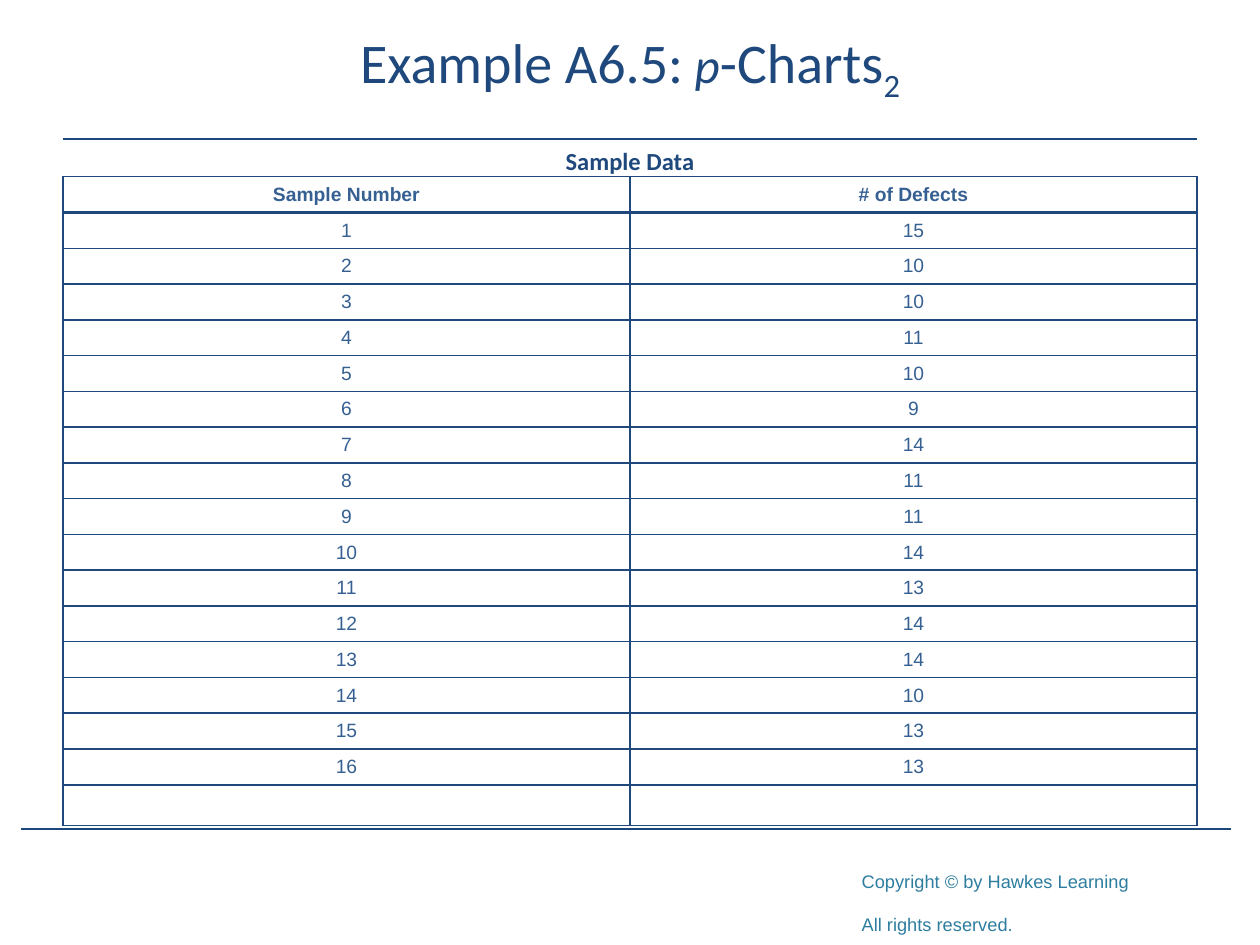
from lxml.etree import SubElement
from pptx import Presentation
from pptx.dml.color import RGBColor
from pptx.enum.shapes import MSO_CONNECTOR, MSO_SHAPE
from pptx.enum.text import MSO_ANCHOR, PP_ALIGN
from pptx.oxml import parse_xml
from pptx.oxml.ns import nsdecls, qn
from pptx.util import Pt

NAVY = RGBColor(0x1F, 0x49, 0x7D)
RULE = RGBColor(0x1C, 0x47, 0x7C)
BLUE = RGBColor(0x36, 0x60, 0x92)
TEAL = RGBColor(0x2D, 0x7D, 0x9F)
WHITE = RGBColor(0xFF, 0xFF, 0xFF)

DEFECTS = [15, 10, 10, 11, 10, 9, 14, 11, 11, 14, 13, 14, 14, 10, 13, 13]
ROW_HEIGHT, LAST_ROW_HEIGHT = 20.45, 23.4


def add_run(p, text, size, color, font="Calibri", bold=False, italic=False,
            subscript=False, align=PP_ALIGN.CENTER):
    p.alignment = align
    r = p.add_run()
    r.text = text
    r.font.name, r.font.size = font, Pt(size)
    r.font.bold, r.font.italic = bold, italic
    r.font.color.rgb = color
    if subscript:
        r.font._element.set("baseline", "-25000")


def set_border(cell, side, width):
    """Draw one side (L, R, T or B) of a cell; call before setting its fill."""
    cell._tc.get_or_add_tcPr().append(parse_xml(
        f'<a:ln{side} {nsdecls("a")} w="{Pt(width)}"><a:solidFill>'
        f'<a:srgbClr val="{NAVY}"/></a:solidFill></a:ln{side}>'))


prs = Presentation()
prs.slide_width, prs.slide_height = Pt(720), Pt(540)
s = prs.slides.add_slide(prs.slide_layouts[6])

# Footer
for left, top, width, height in [(71.3, 473, 221.8, 21.6), (485.3, 460.8, 221.8, 77.8)]:
    sp = s.shapes.add_shape(MSO_SHAPE.RECTANGLE, Pt(left), Pt(top), Pt(width), Pt(height))
    sp.shadow.inherit = False
    sp.fill.solid()
    sp.fill.fore_color.rgb = WHITE
    sp.line.fill.background()
tf = sp.text_frame
tf.word_wrap = True
tf.vertical_anchor = MSO_ANCHOR.TOP
tf.margin_top = Pt(24.3)
for p, text in [(tf.paragraphs[0], "Copyright © by Hawkes Learning"),
                (tf.add_paragraph(), "All rights reserved.")]:
    add_run(p, text, 18, TEAL, font="Arial", subscript=True, align=PP_ALIGN.LEFT)

# Rules under the title and above the footer
for left, right, y in [(36, 684, 79.2), (12.2, 703.4, 473.8)]:
    line = s.shapes.add_connector(MSO_CONNECTOR.STRAIGHT, Pt(left), Pt(y), Pt(right), Pt(y))
    line.line.color.rgb = RULE
    line.line.width = Pt(1.25)
    SubElement(line._element.spPr, qn("a:effectLst"))

# Title
tf = s.shapes.add_textbox(Pt(36), Pt(8.6), Pt(648), Pt(72)).text_frame
tf.word_wrap = True
tf.vertical_anchor = MSO_ANCHOR.MIDDLE
p = tf.paragraphs[0]
p.line_spacing = Pt(30)
add_run(p, "Example A6.5:", 32, NAVY)
add_run(p, " ", 28, NAVY)
add_run(p, "p", 28, NAVY, italic=True)
add_run(p, "-Charts", 32, NAVY)
add_run(p, "2", 32, NAVY, subscript=True)

# Table caption
tf = s.shapes.add_textbox(Pt(180), Pt(79.9), Pt(360), Pt(24.5)).text_frame
tf.word_wrap = True
add_run(tf.paragraphs[0], "Sample Data", 14, NAVY, bold=True)

# Sample table, closed by an empty row
rows = [("Sample Number", "# of Defects")]
rows += [(str(n), str(count)) for n, count in enumerate(DEFECTS, 1)]
rows.append(("", ""))
height = ROW_HEIGHT * (len(rows) - 1) + LAST_ROW_HEIGHT
table = s.shapes.add_table(len(rows), 2, Pt(36), Pt(101), Pt(648), Pt(height)).table
for i, row in enumerate(rows):
    table.rows[i].height = Pt(ROW_HEIGHT if row[0] else LAST_ROW_HEIGHT)
    for j, text in enumerate(row):
        cell = table.cell(i, j)
        cell.margin_top = cell.margin_bottom = 0
        cell.vertical_anchor = MSO_ANCHOR.MIDDLE
        for side in "LRTB":
            under_header = (i, side) in [(0, "B"), (1, "T")]
            set_border(cell, side, 2 if under_header else 1)
        cell.fill.background()
        if text:
            add_run(cell.text_frame.paragraphs[0], text, 11, BLUE, font="Arial", bold=i == 0)

prs.save("out.pptx")
